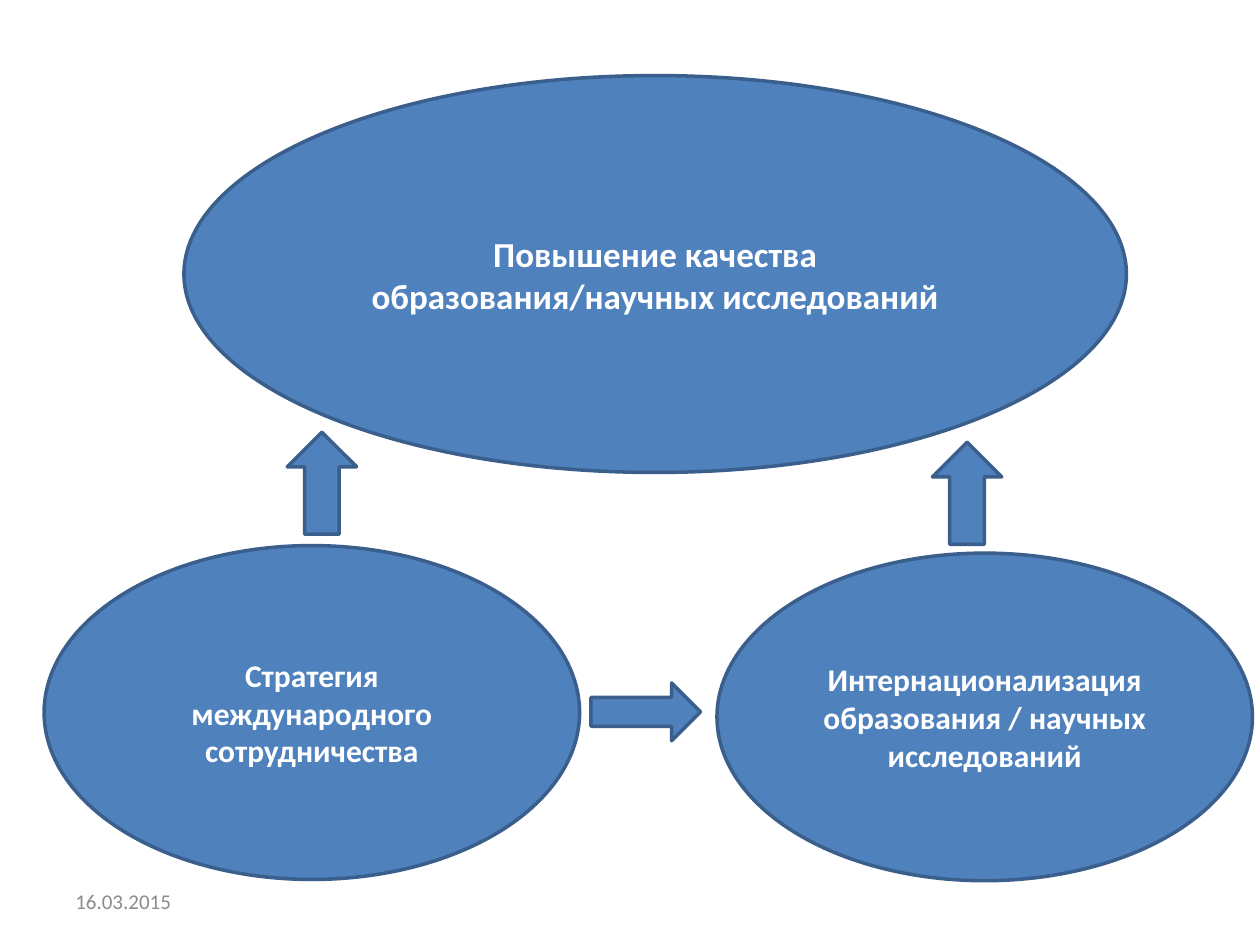
from pptx import Presentation
from pptx.dml.color import RGBColor
from pptx.enum.shapes import MSO_SHAPE as SHAPE
from pptx.enum.text import MSO_ANCHOR as ANCHOR, PP_ALIGN as ALIGN
from pptx.util import Inches, Pt

COLORS = {"fill": "4F81BD", "line": "3A5F8C", "text": "FFFFFF", "date": "8C8C8C"}
FONT = "Calibri"

# Content: text, font size, (left, top, width, height)
GOALS = [
    ("Стратегия международного сотрудничества", 18, (0.35, 4.33, 4.25, 2.65)),
    ("Интернационализация образования / научных исследований", 18,
     (5.69, 4.39, 4.25, 2.6)),
    ("Повышение качества образования/научных исследований", 20,
     (1.46, 0.6, 7.48, 3.15)),
]
ARROWS = [
    (SHAPE.RIGHT_ARROW, (4.69, 5.42, 0.87, 0.46)),
    (SHAPE.UP_ARROW, (7.4, 3.51, 0.55, 0.81)),
    (SHAPE.UP_ARROW, (2.28, 3.43, 0.55, 0.81)),
]
DATE = ("16.03.2015", 12, (0.5, 6.95, 2.33, 0.4))


def color(name):
    return RGBColor.from_string(COLORS[name])


def add_shape(kind, box):
    s = slide.shapes.add_shape(kind, *map(Inches, box))
    s.shadow.inherit = False
    s.fill.solid()
    s.fill.fore_color.rgb = color("fill")
    s.line.color.rgb = color("line")
    s.line.width = Pt(2)
    return s


def set_text(s, text, size, color_name, align, bold=False):
    tf = s.text_frame
    tf.word_wrap = True
    tf.vertical_anchor = ANCHOR.MIDDLE
    p = tf.paragraphs[0]
    p.text = text
    p.alignment = align
    p.font.name = FONT
    p.font.size = Pt(size)
    p.font.bold = bold
    p.font.color.rgb = color(color_name)


prs = Presentation()
prs.slide_width, prs.slide_height = Inches(10), Inches(7.5)
slide = prs.slides.add_slide(prs.slide_layouts[6])

# Ellipses with the goals
for text, size, box in GOALS:
    set_text(add_shape(SHAPE.OVAL, box), text, size, "text", ALIGN.CENTER, bold=True)

# Arrows between them
for kind, box in ARROWS:
    add_shape(kind, box)

# Date
text, size, box = DATE
set_text(slide.shapes.add_textbox(*map(Inches, box)), text, size, "date", ALIGN.LEFT)

prs.save("out.pptx")
